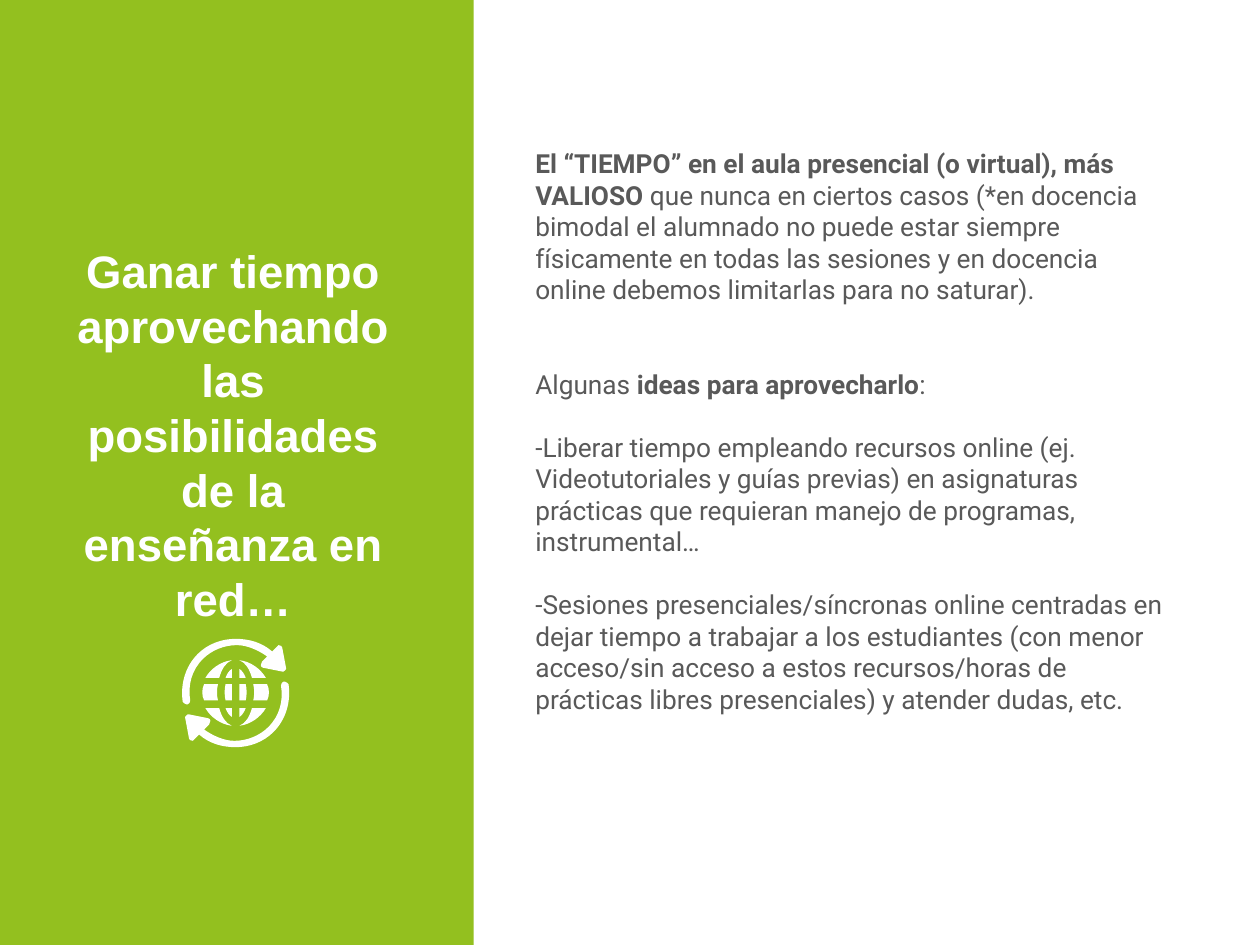
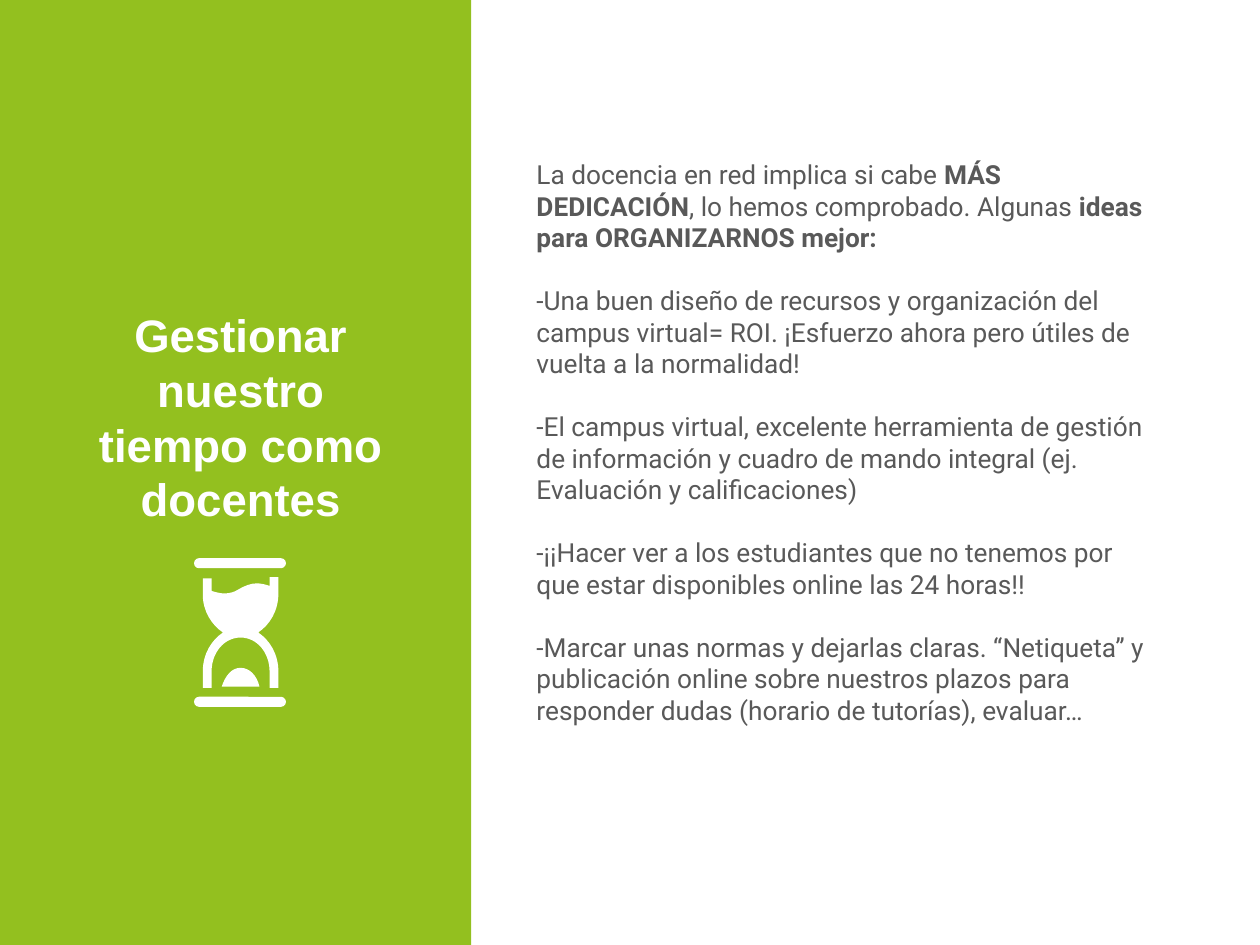
"""Build two slides on saving and managing teaching time online."""
from lxml.etree import SubElement
from pptx import Presentation
from pptx.dml.color import RGBColor as RGB
from pptx.enum.shapes import MSO_SHAPE as SHAPE
from pptx.enum.text import PP_ALIGN as ALIGN
from pptx.oxml.ns import qn
from pptx.util import Inches, Pt

COLORS = {"band": "93C01F", "white": "FFFFFF", "body": "595959"}
FORMATS = {
    "title": {"name": "Arial", "size": Pt(26), "bold": True},
    "body": {"name": "Roboto", "size": Pt(15), "bold": False},
}

GLOBE_CENTER = (1.87, 5.5)
CYCLE_ARROW = [
    (0, -0.43), (-0.11, -0.43, -0.22, -0.39, -0.3, -0.31),
    (-0.4, -0.21, -0.44, -0.07, -0.42, 0.07), (-0.41, 0.08, -0.4, 0.09, -0.39, 0.09),
    (-0.38, 0.09), (-0.37, 0.09, -0.36, 0.07, -0.36, 0.06),
    (-0.38, -0.06, -0.35, -0.18, -0.26, -0.27), (-0.19, -0.34, -0.09, -0.38, 0.01, -0.38),
    (0.09, -0.38, 0.18, -0.34, 0.25, -0.29), (0.21, -0.25),
    (0.2, -0.24, 0.2, -0.23, 0.2, -0.22), (0.2, -0.21, 0.21, -0.2, 0.22, -0.2),
    (0.37, -0.17), (0.38, -0.17), (0.38, -0.17, 0.41, -0.19, 0.4, -0.2),
    (0.37, -0.36), (0.37, -0.37, 0.36, -0.38, 0.34, -0.38),
    (0.34, -0.38, 0.33, -0.38, 0.33, -0.37), (0.29, -0.33),
    (0.21, -0.4, 0.11, -0.43, 0, -0.43),
]
OUTER_CAP = [(0.03, -0.26), (0.08, -0.24, 0.11, -0.19, 0.13, -0.12), (0.24, -0.12),
             (0.2, -0.19, 0.12, -0.25, 0.03, -0.26)]
INNER_CAP = [(0.03, -0.19), (0.03, -0.12), (0.08, -0.12), (0.07, -0.15, 0.05, -0.18, 0.03, -0.19)]
OUTER_BELT = [(0.14, -0.07), (0.15, -0.03, 0.15, 0.02, 0.14, 0.06), (0.25, 0.06),
              (0.27, 0.02, 0.27, -0.03, 0.25, -0.07)]
INNER_BELT = [(0.03, -0.07), (0.03, 0.06), (0.08, 0.06), (0.09, 0.02, 0.09, -0.03, 0.08, -0.07)]
SIDES = [(1, 1), (-1, 1)]
QUADRANTS = SIDES + [(1, -1), (-1, -1)]
GLOBE = [(CYCLE_ARROW, [(1, 1), (-1, -1)]), (OUTER_CAP, QUADRANTS), (INNER_CAP, QUADRANTS),
         (OUTER_BELT, SIDES), (INNER_BELT, SIDES)]

SAND_PILE = [(1.76, 5.45), (1.79, 5.36, 1.84, 5.3, 1.91, 5.3), (1.98, 5.3, 2.04, 5.36, 2.06, 5.45)]
GLASS = [
    (2.14, 4.58), (2.14, 4.65), (2.11, 4.64, 2.07, 4.63, 2.04, 4.63),
    (1.99, 4.63, 1.94, 4.65, 1.89, 4.68), (1.86, 4.7, 1.82, 4.71, 1.78, 4.71),
    (1.75, 4.71, 1.71, 4.7, 1.68, 4.69), (1.68, 4.59), (1.61, 4.59), (1.61, 4.72),
    (1.61, 4.85, 1.68, 4.96, 1.77, 5.02), (1.68, 5.08, 1.61, 5.19, 1.61, 5.33),
    (1.61, 5.46), (1.68, 5.46), (1.68, 5.33), (1.68, 5.18, 1.78, 5.06, 1.91, 5.06),
    (2.04, 5.06, 2.14, 5.18, 2.14, 5.33), (2.14, 5.46), (2.21, 5.46), (2.21, 5.33),
    (2.21, 5.19, 2.14, 5.08, 2.05, 5.02), (2.14, 4.96, 2.21, 4.85, 2.21, 4.71), (2.21, 4.58),
]
HOURGLASS = [(SAND_PILE, [(1, 1)]), (GLASS, [(1, 1)])]

PAGES = [
    {
        "band": 3.76,
        "title": ("Ganar tiempo aprovechando las posibilidades de la enseñanza en red…",
                  (0.51, 1.88, 2.68, 2.42)),
        "place": (4.15, 1.12, 5.21, 5.29), "inset": 0.05,
        "body": [
            (0, "**El “TIEMPO” en el aula presencial (o virtual), más VALIOSO **que nunca en ciertos "
                "casos (*en docencia bimodal el alumnado no puede estar siempre físicamente en todas "
                "las sesiones y en docencia online debemos limitarlas para no saturar)."),
            (36, "Algunas **ideas para aprovecharlo**:"),
            (18, "-Liberar tiempo empleando recursos online (ej. Videotutoriales y guías previas) en "
                 "asignaturas prácticas que requieran manejo de programas, instrumental…"),
            (18, "-Sesiones presenciales/síncronas online centradas en dejar tiempo a trabajar a los "
                 "estudiantes (con menor acceso/sin acceso a estos recursos/horas de prácticas libres "
                 "presenciales) y atender dudas, etc."),
        ],
        "icon": GLOBE, "origin": GLOBE_CENTER, "bars": [],
    },
    {
        "band": 3.74,
        "title": ("Gestionar nuestro tiempo como docentes", (0.65, 2.39, 2.52, 1.84)),
        "place": (4.16, 1.16, 5.1, 5.07), "inset": 0.1,
        "body": [
            (0, "La docencia en red implica si cabe **MÁS DEDICACIÓN**, lo hemos comprobado. Algunas "
                "**ideas para ORGANIZARNOS mejor:**"),
            (18, "-Una buen diseño de recursos y organización del campus virtual= ROI. ¡Esfuerzo ahora "
                 "pero útiles de vuelta a la normalidad!"),
            (18, "-El campus virtual, excelente herramienta de gestión de información y cuadro de mando "
                 "integral (ej. Evaluación y calificaciones)"),
            (18, "-¡¡Hacer ver a los estudiantes que no tenemos por que estar disponibles online las "
                 "24 horas!!"),
            (18, "-Marcar unas normas y dejarlas claras. “Netiqueta” y publicación online sobre nuestros "
                 "plazos para responder dudas (horario de tutorías), evaluar…"),
        ],
        "icon": HOURGLASS, "origin": (0, 0), "bars": [5.53, 4.43],
    },
]


def paint(shape, color):
    shape.shadow.inherit = False
    shape.fill.solid()
    shape.fill.fore_color.rgb = RGB.from_string(COLORS[color])
    shape.line.fill.background()


def write(slide, place, inset, paragraphs, style, color, align):
    frame = slide.shapes.add_textbox(*map(Inches, place)).text_frame
    frame.word_wrap = True
    frame.margin_top = frame.margin_bottom = Inches(inset)
    for index, (gap, text) in enumerate(paragraphs):
        paragraph = frame.add_paragraph() if index else frame.paragraphs[0]
        paragraph.alignment = align
        paragraph.line_spacing = Pt(FORMATS[style]["size"].pt * 1.2)
        paragraph.space_before = Pt(gap)
        for part, words in enumerate(text.split("**")):
            if not words:
                continue
            run = paragraph.add_run()
            run.text = words
            for key, value in FORMATS[style].items():
                setattr(run.font, key, value)
            if part % 2:
                run.font.bold = True
            run.font.color.rgb = RGB.from_string(COLORS[color])


deck = Presentation()
deck.slide_width, deck.slide_height = Inches(10), Inches(7.5)

for page in PAGES:
    slide = deck.slides.add_slide(deck.slide_layouts[6])
    band = slide.shapes.add_shape(SHAPE.RECTANGLE, 0, 0, Inches(page["band"]), deck.slide_height)
    paint(band, "band")
    heading, heading_place = page["title"]
    write(slide, heading_place, 0.05, [(0, heading)], "title", "white", ALIGN.CENTER)
    write(slide, page["place"], page["inset"], page["body"], "body", "body", ALIGN.LEFT)

    icon = slide.shapes.add_group_shape()
    for outline, flips in page["icon"]:
        for flip in flips:
            steps = [[Inches(page["origin"][i % 2] + flip[i % 2] * value)
                      for i, value in enumerate(step)] for step in outline]
            pen = icon.shapes.build_freeform(*steps[0])
            pen.add_line_segments([step[-2:] for step in steps[1:]], close=True)
            piece = pen.convert_to_shape()
            paint(piece, "white")
            for segment, step in zip(list(piece.element.iter(qn("a:lnTo"))), steps[1:]):
                if len(step) == 2:
                    continue
                curve = SubElement(segment.getparent(), qn("a:cubicBezTo"))
                for x, y in zip(step[::2], step[1::2]):
                    SubElement(curve, qn("a:pt"), x=str(x - piece.left), y=str(y - piece.top))
                segment.getparent().replace(segment, curve)

    for top in page["bars"]:
        bar = icon.shapes.add_shape(SHAPE.ROUNDED_RECTANGLE, *map(Inches, (1.54, top, 0.73, 0.08)))
        bar.adjustments[0] = 0.5
        paint(bar, "white")

deck.save("out.pptx")
